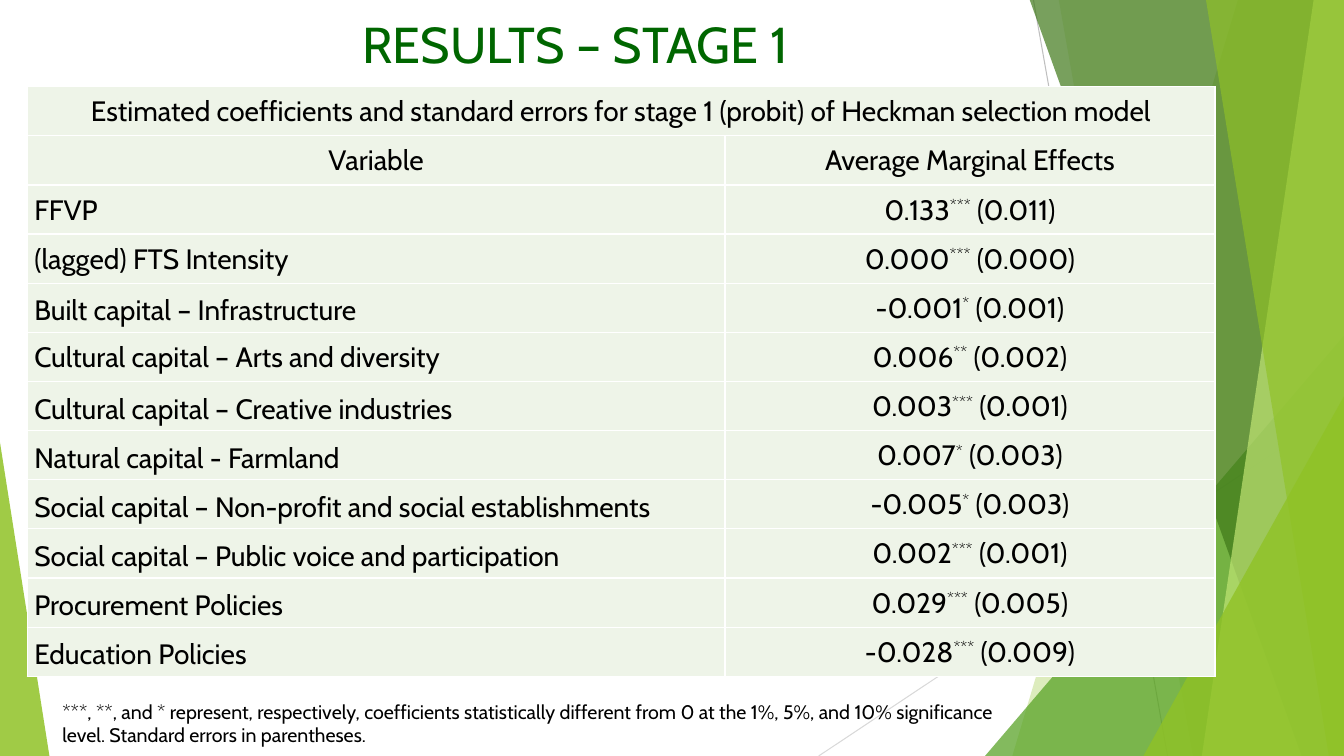
from dataclasses import dataclass

from lxml import etree
from pptx import Presentation
from pptx.dml.color import RGBColor
from pptx.enum.shapes import MSO_CONNECTOR, MSO_SHAPE
from pptx.enum.text import MSO_ANCHOR, MSO_AUTO_SIZE, PP_ALIGN
from pptx.oxml import parse_xml
from pptx.oxml.ns import nsdecls, qn
from pptx.util import Pt

CENTER, LEFT = PP_ALIGN.CENTER, PP_ALIGN.LEFT
MIDDLE = MSO_ANCHOR.MIDDLE
EMU_PER_PX = 9144  # 100 px to the inch


@dataclass(frozen=True)
class Theme:
    font: str = "Cabin"
    title_size: int = 36
    table_size: int = 20
    note_size: int = 14
    title: str = "006600"
    text: str = "000000"
    cell: str = "EEF4E8"
    border: str = "FFFFFF"
    green: str = "90C226"
    mid_green: str = "54A021"
    dark_green: str = "3F7819"
    pale_green: str = "C0E474"


THEME = Theme()
SLIDE_SIZE = (1333, 750)

TITLE = "RESULTS – STAGE 1"
CAPTION = "Estimated coefficients and standard errors for stage 1 (probit) of Heckman selection model"
HEADINGS = ("Variable", "Average Marginal Effects")
# variable, line spacing, effect, significance stars, standard error
RESULTS = [
    ("FFVP", 1, "0.133", "***", "0.011"),
    ("(lagged) FTS Intensity", 1, "0.000", "***", "0.000"),
    ("Built capital – Infrastructure", 1.15, "-0.001", "*", "0.001"),
    ("Cultural capital – Arts and diversity", 1, "0.006", "**", "0.002"),
    ("Cultural capital – Creative industries", 1.15, "0.003", "***", "0.001"),
    ("Natural capital - Farmland", 1.15, "0.007", "*", "0.003"),
    ("Social capital – Non-profit and social establishments", 1.15, "-0.005", "*", "0.003"),
    ("Social capital – Public voice and participation", 1.15, "0.002", "***", "0.001"),
    ("Procurement Policies", 1.15, "0.029", "***", "0.005"),
    ("Education Policies", 1.15, "-0.028", "***", "0.009"),
]
NOTE = ("***, **, and * represent, respectively, coefficients statistically different from 0 "
        "at the 1%, 5%, and 10% significance level. Standard errors in parentheses.")

TITLE_BOX = (20, 8, 1101, 71)
TABLE_BOX = (27, 86, 1178, 585)
COLUMN_WIDTHS = (692, 486)
NOTE_BOX = (52, 689, 959, 57)

RAYS = [((1025, 0), (1158, 750), "BFBFBF"), ((1333, 403), (812, 750), "D9D9D9")]
# Bands reach the right edge: top-left x, bottom-left x, colour, opacity in percent
# Triangles: box, apex position, colour, opacity in percent
DECORATION = [
    ("band", (1228, 1004), THEME.green, 30),
    ("band", (1050, 1183), THEME.green, 20),
    ("triangle", ((977, 333, 356, 417), 1), THEME.mid_green, 72),
    ("band", (1021, 1291), THEME.dark_green, 70),
    ("band", (1303, 1192), THEME.pale_green, 70),
    ("band", (1196, 1318), THEME.green, 65),
    ("triangle", ((1134, 393, 199, 357), 1), THEME.green, 80),
    ("triangle", ((0, 439, 49, 311), 0), THEME.green, 85),
]


def px(*lengths):
    return [length * EMU_PER_PX for length in lengths]


def add_ray(slide, start, end, color):
    ray = slide.shapes.add_connector(MSO_CONNECTOR.STRAIGHT, *px(*start, *end))
    ray.line.color.rgb = RGBColor.from_string(color)
    ray.line.width = Pt(0.75)
    etree.SubElement(ray._element.spPr, qn("a:effectLst"))


def add_band(slide, top_x, bottom_x):
    right, bottom = SLIDE_SIZE
    builder = slide.shapes.build_freeform(*px(top_x, -1), scale=1.0)
    corners = [(right, -1), (right, bottom), (bottom_x, bottom)]
    builder.add_line_segments([px(*corner) for corner in corners], close=True)
    return builder.convert_to_shape()


def add_triangle(slide, box, apex):
    shape = slide.shapes.add_shape(MSO_SHAPE.ISOSCELES_TRIANGLE, *px(*box))
    shape.adjustments[0] = apex
    return shape


def add_decoration(slide):
    for ray in RAYS:
        add_ray(slide, *ray)
    builders = {"band": add_band, "triangle": add_triangle}
    for kind, geometry, color, opacity in DECORATION:
        shape = builders[kind](slide, *geometry)
        shape.shadow.inherit = False
        shape.line.fill.background()
        shape.fill.solid()
        shape.fill.fore_color.rgb = RGBColor.from_string(color)
        color_element = shape._element.spPr.find(".//" + qn("a:srgbClr"))
        etree.SubElement(color_element, qn("a:alpha"), val=str(opacity * 1000))


def format_paragraph(paragraph, size, color, alignment):
    paragraph.alignment = alignment
    for run in paragraph.runs:
        run.font.name = THEME.font
        run.font.size = Pt(size)
        run.font.color.rgb = RGBColor.from_string(color)


def add_title(slide):
    title = slide.shapes.title
    title.left, title.top, title.width, title.height = px(*TITLE_BOX)
    frame = title.text_frame
    frame.text = TITLE
    frame.auto_size = MSO_AUTO_SIZE.NONE
    frame.vertical_anchor = MIDDLE
    format_paragraph(frame.paragraphs[0], THEME.title_size, THEME.title, CENTER)
    slide.shapes._spTree.append(title._element)  # in front of the decoration


def style_cell(cell):
    properties = cell._tc.get_or_add_tcPr()
    for side in ("lnL", "lnR", "lnT", "lnB"):
        properties.append(parse_xml(
            f'<a:{side} {nsdecls("a")} w="12700"><a:solidFill>'
            f'<a:srgbClr val="{THEME.border}"/></a:solidFill></a:{side}>'))
    cell.fill.solid()
    cell.fill.fore_color.rgb = RGBColor.from_string(THEME.cell)
    cell.vertical_anchor = MIDDLE
    cell.margin_left, cell.margin_right, cell.margin_top, cell.margin_bottom = px(1, 1, 1, 0)


def write_cell(cell, pieces, alignment=CENTER):
    """Write the pieces as runs, every second one as superscript."""
    paragraph = cell.text_frame.paragraphs[0]
    for index, piece in enumerate(pieces):
        run = paragraph.add_run()
        run.text = piece
        if index % 2:
            run.font._element.set("baseline", "30000")
    format_paragraph(paragraph, THEME.table_size, THEME.text, alignment)
    return paragraph


def add_results_table(slide):
    row_count = len(RESULTS) + 2
    frame = slide.shapes.add_table(row_count, len(COLUMN_WIDTHS), *px(*TABLE_BOX))
    table = frame.table
    table.first_row = table.horz_banding = False
    for column, width in zip(table.columns, px(*COLUMN_WIDTHS)):
        column.width = width
    for cell in table.iter_cells():
        style_cell(cell)

    table.cell(0, 0).merge(table.cell(0, 1))
    write_cell(table.cell(0, 0), [CAPTION])
    for column, heading in enumerate(HEADINGS):
        write_cell(table.cell(1, column), [heading])
    for row, (variable, spacing, effect, stars, error) in enumerate(RESULTS, start=2):
        name_cell = table.cell(row, 0)
        name_cell.margin_left, name_cell.margin_right = px(7, 7)
        write_cell(name_cell, [variable], LEFT).line_spacing = float(spacing)
        write_cell(table.cell(row, 1), [effect, stars, f" ({error})"])


def add_note(slide):
    frame = slide.shapes.add_textbox(*px(*NOTE_BOX)).text_frame
    frame.word_wrap = True
    frame.text = NOTE
    format_paragraph(frame.paragraphs[0], THEME.note_size, THEME.text, LEFT)


def main():
    presentation = Presentation()
    presentation.slide_width, presentation.slide_height = px(*SLIDE_SIZE)
    slide = presentation.slides.add_slide(presentation.slide_layouts[5])
    add_decoration(slide)
    add_title(slide)
    add_results_table(slide)
    add_note(slide)
    presentation.save("out.pptx")


if __name__ == "__main__":
    main()
